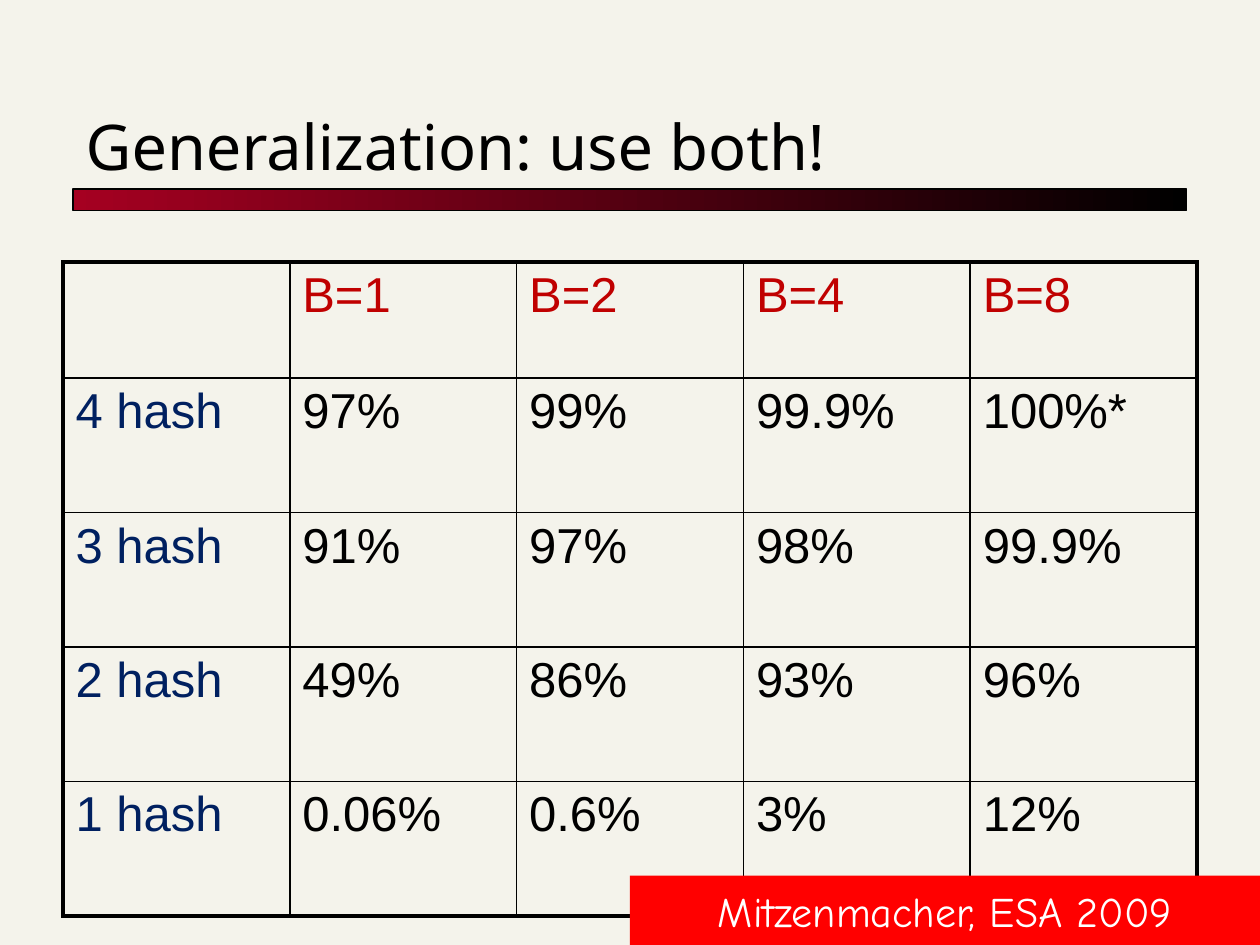
from dataclasses import dataclass
from lxml.etree import SubElement as Sub
from pptx import Presentation
from pptx.dml.color import RGBColor as RGB
from pptx.enum.shapes import MSO_SHAPE as Shape
from pptx.enum.text import MSO_ANCHOR as Anchor, PP_ALIGN as Align
from pptx.oxml.ns import qn
from pptx.util import Inches, Pt


@dataclass(frozen=True)
class Theme:
    paper: str = "F4F3EB"
    ink: str = "000000"
    wine: str = "A50021"
    head: str = "C00000"
    side: str = "002060"
    flag: str = "FF0000"
    white: str = "FFFFFF"
    title: tuple = ("Noto Sans", 36)
    cell: tuple = ("Arial", 28)
    note: tuple = ("Comic Neue", 24)
    thin: float = 1
    thick: float = 2.25


T = Theme()
W, H = 10, 7.5
ROWS = [
    ["", "B=1", "B=2", "B=4", "B=8"],
    ["4 hash", "97%", "99%", "99.9%", "100%*"],
    ["3 hash", "91%", "97%", "98%", "99.9%"],
    ["2 hash", "49%", "86%", "93%", "96%"],
    ["1 hash", "0.06%", "0.6%", "3%", "12%"],
]


def style(frame, face, color):
    for para in frame.paragraphs:
        for run in para.runs:
            run.font.name, run.font.size = face[0], Pt(face[1])
            run.font.color.rgb = RGB.from_string(color)


def bar(slide, box):
    """Add a plain rectangle without shadow."""
    rect = slide.shapes.add_shape(Shape.RECTANGLE, *map(Inches, box))
    rect.shadow.inherit = False
    return rect


def heading(slide, box, text):
    x, y, w, h = box
    # Rule under the title, fading from wine to black
    rule = bar(slide, (x, y + h, w, 0.17))
    rule.fill.gradient()
    rule.fill.gradient_angle = 0
    for stop, color, pos in zip(rule.fill.gradient_stops, (T.wine, T.ink), (0, 1)):
        stop.color.rgb, stop.position = RGB.from_string(color), pos
    rule.line.color.rgb, rule.line.width = RGB.from_string(T.ink), Pt(0.75)
    # Title text
    title = slide.shapes.title
    title.left, title.top, title.width, title.height = map(Inches, box)
    frame = title.text_frame
    frame.text = text
    frame.vertical_anchor = Anchor.BOTTOM
    frame.paragraphs[0].alignment = Align.LEFT
    style(frame, T.title, T.ink)


def edges(cell, outer):
    """Draw cell borders; the sides named in outer are thick."""
    props = cell._tc.get_or_add_tcPr()
    for side in "LRTB":
        width = T.thick if side in outer else T.thin
        line = Sub(props, qn(f"a:ln{side}"), w=str(Pt(width)))
        Sub(Sub(line, qn("a:solidFill")), qn("a:srgbClr"), val=T.ink)


def grid(slide, box, rows, first):
    """Add the table; first is the height of the header row."""
    x, y, w, h = box
    last, end = len(rows) - 1, len(rows[0]) - 1
    table = slide.shapes.add_table(last + 1, end + 1, *map(Inches, box)).table
    table.first_row = table.horz_banding = False
    for col in table.columns:
        col.width = Inches(w / (end + 1))
    for r, row in enumerate(rows):
        table.rows[r].height = Inches(first if r == 0 else (h - first) / last)
        for c, text in enumerate(row):
            cell = table.cell(r, c)
            cell.text = text
            color = T.head if r == 0 else T.side if c == 0 else T.ink
            style(cell.text_frame, T.cell, color)
            ends = {"L": c == 0, "R": c == end, "T": r == 0, "B": r == last}
            edges(cell, [side for side in ends if ends[side]])
            cell.fill.background()


def credit(slide, box, text):
    tag = bar(slide, box)
    tag.fill.solid()
    tag.fill.fore_color.rgb = RGB.from_string(T.flag)
    tag.line.fill.background()
    frame = tag.text_frame
    frame.text = text
    frame.word_wrap = False
    frame.vertical_anchor = Anchor.MIDDLE
    frame.paragraphs[0].alignment = Align.CENTER
    style(frame, T.note, T.white)


def main():
    deck = Presentation()
    deck.slide_width, deck.slide_height = Inches(W), Inches(H)
    slide = deck.slides.add_slide(deck.slide_layouts[5])
    fill = slide.background.fill
    fill.solid()
    fill.fore_color.rgb = RGB.from_string(T.paper)
    heading(slide, (0.58, 0.42, 8.84, 1.08), "Generalization: use both!")
    grid(slide, (0.05 * W, 2.08, 0.9 * W, 5.19), ROWS, 0.92)
    credit(slide, (W / 2, H - 0.55, W / 2, 0.55), "Mitzenmacher, ESA 2009")
    deck.save("out.pptx")


if __name__ == "__main__":
    main()
